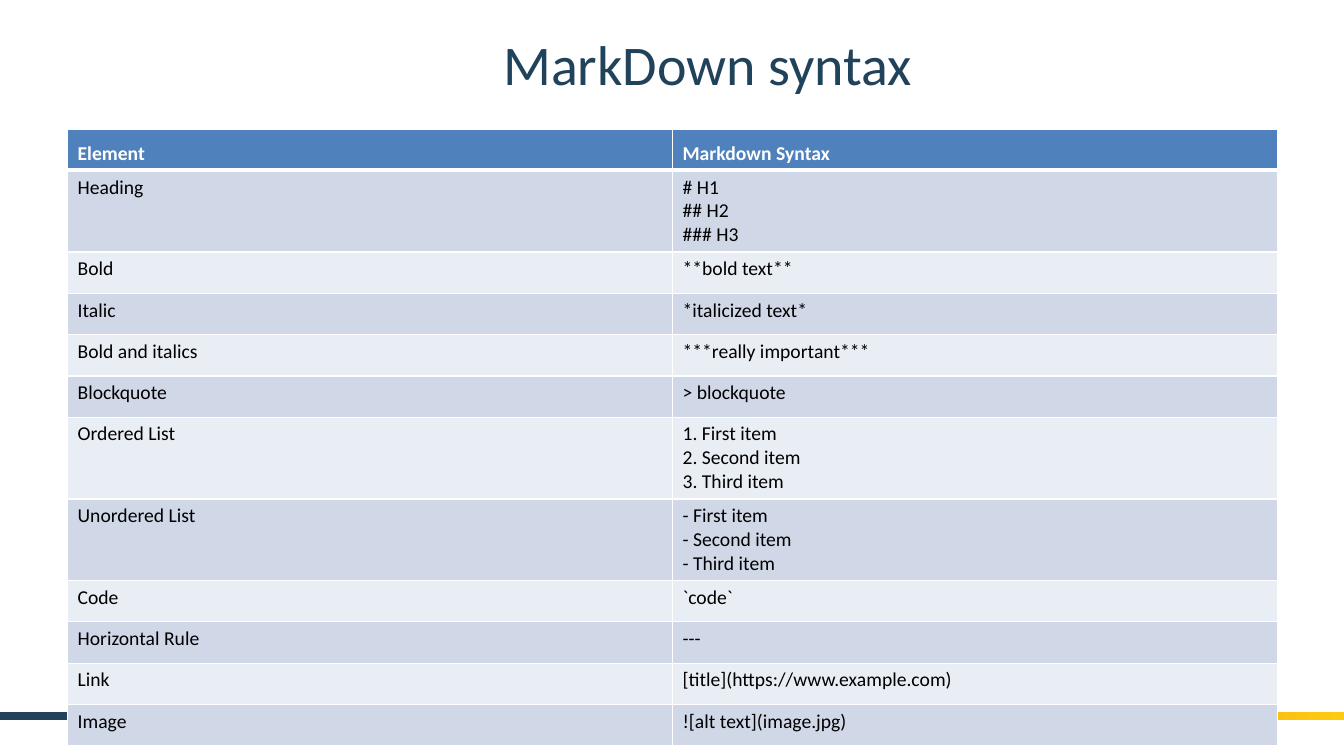
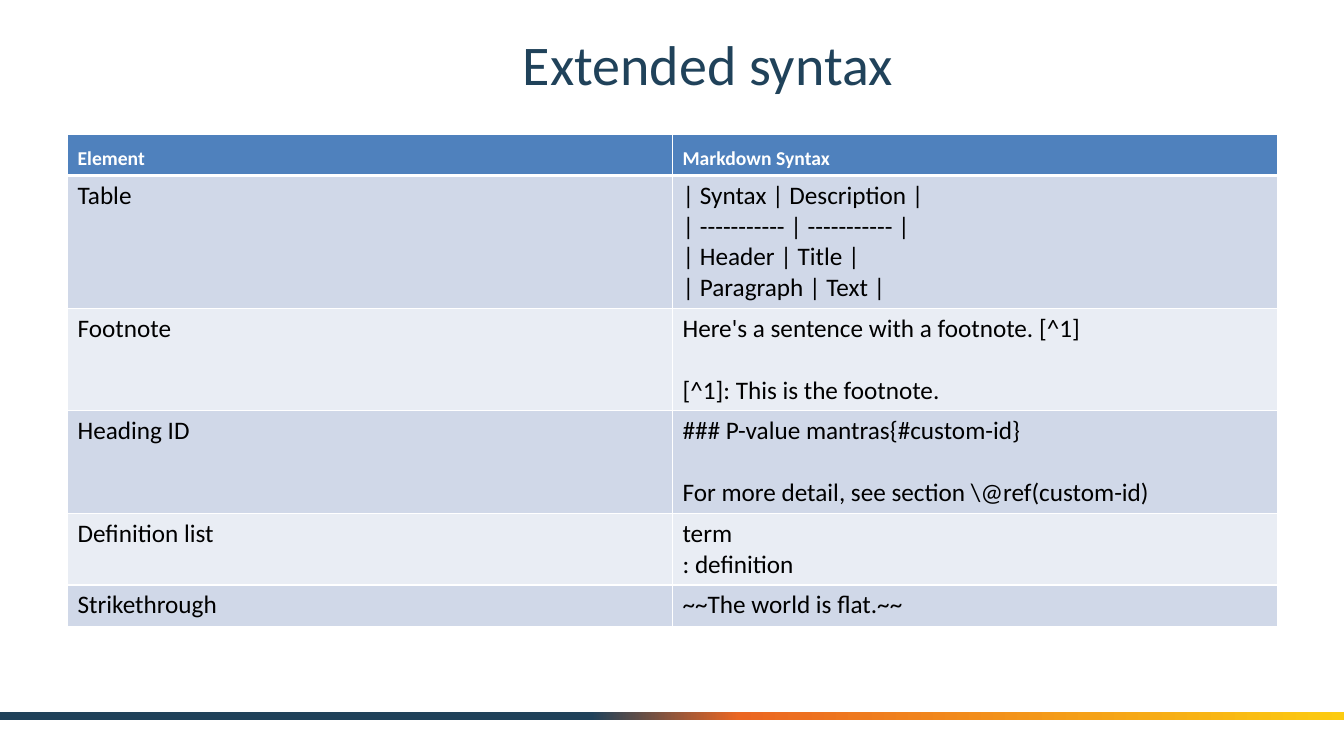
from copy import deepcopy

from lxml.etree import SubElement
from pptx import Presentation
from pptx.dml.color import RGBColor
from pptx.enum.shapes import MSO_SHAPE
from pptx.enum.text import MSO_ANCHOR as Anchor, PP_ALIGN as Align
from pptx.oxml.ns import qn
from pptx.util import Inches, Pt

COLORS = {
    "navy": "20425A",
    "orange": "EB6622",
    "yellow": "FCCB10",
    "header": "4F81BD",
    "odd_row": "D0D8E8",
    "even_row": "E9EDF4",
    "white": "FFFFFF",
    "black": "000000",
}
FONT = "Calibri"
HEADER = ("Element", "Markdown Syntax")
HEADER_SIZE = 14
ROW_HEIGHT = 0.41

BASIC_SYNTAX = [
    ("Heading", "# H1\n## H2\n### H3"),
    ("Bold", "**bold text**"),
    ("Italic", "*italicized text*"),
    ("Bold and italics", "***really important***"),
    ("Blockquote", "> blockquote"),
    ("Ordered List", "1. First item\n2. Second item\n3. Third item"),
    ("Unordered List", "- First item\n- Second item\n- Third item"),
    ("Code", "`code`"),
    ("Horizontal Rule", "---"),
    ("Link", "[title](https://www.example.com)"),
    ("Image", "![alt text](image.jpg)"),
]
EXTENDED_SYNTAX = [
    ("Table", "| Syntax | Description |\n| ----------- | ----------- |\n"
              "| Header | Title |\n| Paragraph | Text |"),
    ("Footnote", "Here's a sentence with a footnote. [^1]\n\n"
                 "[^1]: This is the footnote."),
    ("Heading ID", "### P-value mantras{#custom-id}\n\n"
                   "For more detail, see section \\@ref(custom-id)"),
    ("Definition list", "term\n: definition"),
    ("Strikethrough", "~~The world is flat.~~"),
]


def rgb(name):
    return RGBColor.from_string(COLORS[name])


def add_run(paragraph, text, size, color, bold=False):
    run = paragraph.add_run()
    run.text = text
    run.font.name = FONT
    run.font.size = Pt(size)
    run.font.bold = bold
    run.font.color.rgb = rgb(color)


def add_footer_band(layout, slide):
    band = slide.shapes.add_shape(
        MSO_SHAPE.RECTANGLE, 0, Inches(7.06), Inches(13.33), Inches(0.08))
    band.shadow.inherit = False
    band.line.fill.background()
    band.fill.gradient()
    band.fill.gradient_angle = 0
    stop_list = band.element.find(".//" + qn("a:gsLst"))
    stop_list.append(deepcopy(stop_list[-1]))
    stops = ((0.44, "navy"), (0.55, "orange"), (1, "yellow"))
    for stop, (position, color) in zip(band.fill.gradient_stops, stops):
        stop.position = position
        stop.color.rgb = rgb(color)
    layout.shapes.element.insert(2, band.element)


def place_title(layout):
    title = layout.placeholders[0]
    title.left, title.top = Inches(1.37), Inches(0.17)
    title.width, title.height = Inches(11.3), Inches(0.92)


def set_title(slide, text):
    frame = slide.shapes.title.text_frame
    frame.vertical_anchor = Anchor.MIDDLE
    paragraph = frame.paragraphs[0]
    paragraph.alignment = Align.CENTER
    add_run(paragraph, text, 40, "navy")


def set_borders(cell, top, bottom):
    properties = cell._tc.get_or_add_tcPr()
    for side, width in (("L", 1), ("R", 1), ("T", top), ("B", bottom)):
        border = SubElement(properties, qn(f"a:ln{side}"), w=str(Pt(width)))
        fill = SubElement(border, qn("a:solidFill"))
        SubElement(fill, qn("a:srgbClr"), val=COLORS["white"])


def write_cell(cell, text, size, color, bold):
    frame = cell.text_frame
    for index, block in enumerate(text.split("\n\n")):
        paragraph = frame.add_paragraph() if index else frame.paragraphs[0]
        if index:
            paragraph.space_before = Pt(size * 1.22)
        for number, line in enumerate(block.split("\n")):
            if number:
                paragraph.add_line_break()
            add_run(paragraph, line, size, color, bold)


def add_syntax_table(slide, top, entries, size):
    rows = [HEADER, *entries]
    table = slide.shapes.add_table(
        len(rows), 2, Inches(0.67), Inches(top), Inches(12),
        Inches(ROW_HEIGHT * len(rows))).table
    table.horz_banding = False
    for row_index, row in enumerate(rows):
        table.rows[row_index].height = Inches(ROW_HEIGHT)
        is_header = row_index == 0
        band = "header" if is_header else ("even_row", "odd_row")[row_index % 2]
        for column, text in enumerate(row):
            cell = table.cell(row_index, column)
            set_borders(cell, 3 if row_index == 1 else 1, 3 if is_header else 1)
            cell.fill.solid()
            cell.fill.fore_color.rgb = rgb(band)
            cell.vertical_anchor = Anchor.BOTTOM if is_header else Anchor.TOP
            write_cell(cell, text, HEADER_SIZE if is_header else size,
                       "white" if is_header else "black", is_header)


def main():
    deck = Presentation()
    deck.slide_width, deck.slide_height = Inches(13.33), Inches(7.5)
    layout = deck.slide_layouts[5]
    place_title(layout)
    pages = (
        ("MarkDown syntax", 1.28, BASIC_SYNTAX, 14),
        ("Extended syntax", 1.33, EXTENDED_SYNTAX, 18),
    )
    for title, top, entries, size in pages:
        slide = deck.slides.add_slide(layout)
        set_title(slide, title)
        add_syntax_table(slide, top, entries, size)
    add_footer_band(layout, slide)
    deck.save("out.pptx")


if __name__ == "__main__":
    main()
